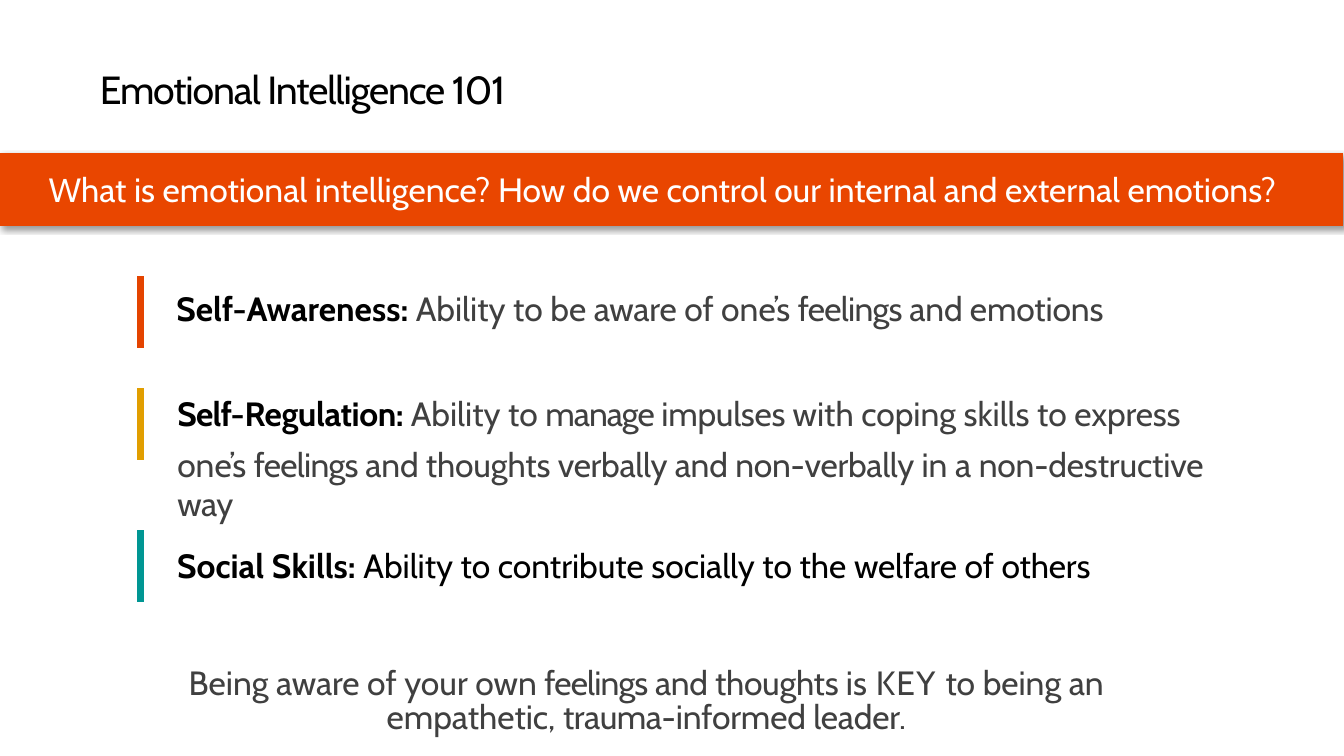
from lxml import etree
from pptx import Presentation
from pptx.dml.color import RGBColor
from pptx.enum.shapes import MSO_CONNECTOR, MSO_SHAPE
from pptx.enum.text import MSO_ANCHOR, MSO_AUTO_SIZE, PP_ALIGN
from pptx.oxml import parse_xml
from pptx.oxml.ns import qn
from pptx.util import Inches, Pt

RECTANGLE = MSO_SHAPE.RECTANGLE
STRAIGHT = MSO_CONNECTOR.STRAIGHT
BOTTOM, MIDDLE = MSO_ANCHOR.BOTTOM, MSO_ANCHOR.MIDDLE
NO_FIT, GROW = MSO_AUTO_SIZE.NONE, MSO_AUTO_SIZE.SHAPE_TO_FIT_TEXT
LEFT, CENTER = PP_ALIGN.LEFT, PP_ALIGN.CENTER

FONT = "Cabin"
BLACK, GRAY, WHITE, ORANGE = "000000", "404040", "FFFFFF", "E94600"
RULE_X, RULE_HEIGHT = 1.39, 0.71
SHADOW = (
    '<a:outerShdw xmlns:a="http://schemas.openxmlformats.org/drawingml/2006/main" '
    'blurRad="50800" dist="38100" dir="2700000" algn="tl" rotWithShape="0">'
    '<a:srgbClr val="000000"><a:alpha val="40000"/></a:srgbClr></a:outerShdw>'
)

SKILLS = [
    {
        "box": (1.65, 2.81, 9.55, 0.5), "rule_top": 2.74, "rule_color": "E44400",
        "indent": 0, "color": GRAY, "line_spacing": None,
        "term": [("Self-Awareness: ", 0)],
        "meaning": [[("Ability to be ", 0), ("aware ", -0.1), ("of one’s ", 0),
                     ("feelings ", -0.5), ("and emotions", -0.1)]],
    },
    {
        "box": (1.15, 3.87, 11.41, 0.98), "rule_top": 3.85, "rule_color": "E19E00",
        "indent": 0.51, "color": GRAY, "line_spacing": Pt(27.4),
        "term": [("Self-", -0.5), ("Regulation: ", -0.3)],
        "meaning": [[("Ability to ", 0), ("manage ", -0.7), ("impulses ", -0.2),
                     ("with coping skills to ", 0), ("express", -0.1)],
                    [("one’s ", 0), ("feelings ", -0.5), ("and thoughts ", -0.1),
                     ("verbally ", -0.2), ("and ", -0.1), ("non-verbally ", -0.2),
                     ("in a ", 0), ("non-destructive ", -0.1), ("way", -0.2)]],
    },
    {
        "box": (1.15, 5.36, 9.83, 0.5), "rule_top": 5.26, "rule_color": "009693",
        "indent": 0.51, "color": BLACK, "line_spacing": None,
        "term": [("Social", 0), (" S", 0.1), ("kills: ", 0)],
        "meaning": [[("Ability to contribute socially to the ", 0),
                     ("welfare ", -0.1), ("of ", 0), ("others", -0.1)]],
    },
]

KEY_MESSAGE = [
    ("Being aware of your own ", 0), ("feelings ", -0.6), ("and thoughts ", -0.2),
    ("is", 0), (" KEY ", 0.9), ("to being an empathetic, ", 0),
    ("trauma-", -0.3), ("informed leader.", -0.1),
]


def rgb(value):
    """Turn a hex string into a colour."""
    return RGBColor.from_string(value)


def set_font(paragraph, size):
    """Give a paragraph the slide's typeface at a size."""
    paragraph.font.name = FONT
    paragraph.font.size = Pt(size)


def add_phrases(paragraph, phrases, color, bold=False):
    """Append phrases, each with its letter spacing in points."""
    for words, tracking in phrases:
        phrase = paragraph.add_run()
        phrase.text = words
        phrase.font.color.rgb = rgb(color)
        phrase.font.bold = bold
        if tracking:
            phrase.font._element.set("spc", str(round(tracking * 100)))


def add_text_frame(shapes, box):
    """Add a wrapping text box that grows with its text."""
    frame = shapes.add_textbox(*map(Inches, box)).text_frame
    frame.word_wrap = True
    frame.auto_size = GROW
    return frame


def add_title(slide, box):
    """Place and format the slide title."""
    title = slide.shapes.title
    title.left, title.top, title.width, title.height = map(Inches, box)
    frame = title.text_frame
    frame.auto_size = NO_FIT
    frame.vertical_anchor = BOTTOM
    frame.margin_left = frame.margin_right = frame.margin_bottom = 0
    heading = frame.paragraphs[0]
    heading.alignment = LEFT
    heading.line_spacing = 0.9
    set_font(heading, 28)
    add_phrases(heading, [("Emotional Intelligence 101", -0.8)], BLACK)


def add_question_banner(slide, box):
    """Draw the shadowed band with the opening questions."""
    banner = slide.shapes.add_shape(RECTANGLE, *map(Inches, box))
    banner.fill.solid()
    banner.fill.fore_color.rgb = rgb(ORANGE)
    banner.line.fill.background()
    banner.shadow.inherit = False
    banner._element.spPr.find(qn("a:effectLst")).append(parse_xml(SHADOW))
    frame = banner.text_frame
    frame.word_wrap = True
    frame.vertical_anchor = MIDDLE
    frame.margin_right = Inches(0.27)
    question = frame.paragraphs[0]
    question.alignment = CENTER
    set_font(question, 24)
    add_phrases(question, [("What is emotional intelligence? How do we control "
                            "our internal and external emotions?", 0)], WHITE)


def add_skill(slide, skill):
    """Group a skill's definition with its coloured rule."""
    group = slide.shapes.add_group_shape()
    frame = add_text_frame(group.shapes, skill["box"])
    for number, phrases in enumerate(skill["meaning"]):
        definition = frame.add_paragraph() if number else frame.paragraphs[0]
        definition._p.get_or_add_pPr().set("marL", str(Inches(skill["indent"])))
        definition.line_spacing = skill["line_spacing"]
        set_font(definition, 24)
        if number:
            definition.space_before = Pt(9.2)
        else:
            add_phrases(definition, skill["term"], BLACK, bold=True)
        add_phrases(definition, phrases, skill["color"])
    top = skill["rule_top"]
    rule = group.shapes.add_connector(
        STRAIGHT, Inches(RULE_X), Inches(top), Inches(RULE_X), Inches(top + RULE_HEIGHT))
    rule.line.color.rgb = rgb(skill["rule_color"])
    rule.line.width = Pt(5)
    etree.SubElement(rule._element.spPr, qn("a:effectLst"))


def add_key_message(slide, box):
    """Add the centred closing message."""
    message = add_text_frame(slide.shapes, box).paragraphs[0]
    message.alignment = CENTER
    message.line_spacing = 0.85
    set_font(message, 24)
    add_phrases(message, KEY_MESSAGE, GRAY)


def main():
    """Build and save the slide."""
    deck = Presentation()
    deck.slide_width, deck.slide_height = Inches(13.33), Inches(7.5)
    slide = deck.slides.add_slide(deck.slide_layouts[5])
    add_title(slide, (0.99, 0.47, 11.33, 0.65))
    add_question_banner(slide, (-0.01, 1.52, 13.33, 0.72))
    for skill in SKILLS:
        add_skill(slide, skill)
    add_key_message(slide, (1.73, 6.58, 9.36, 0.79))
    deck.save("out.pptx")


if __name__ == "__main__":
    main()
